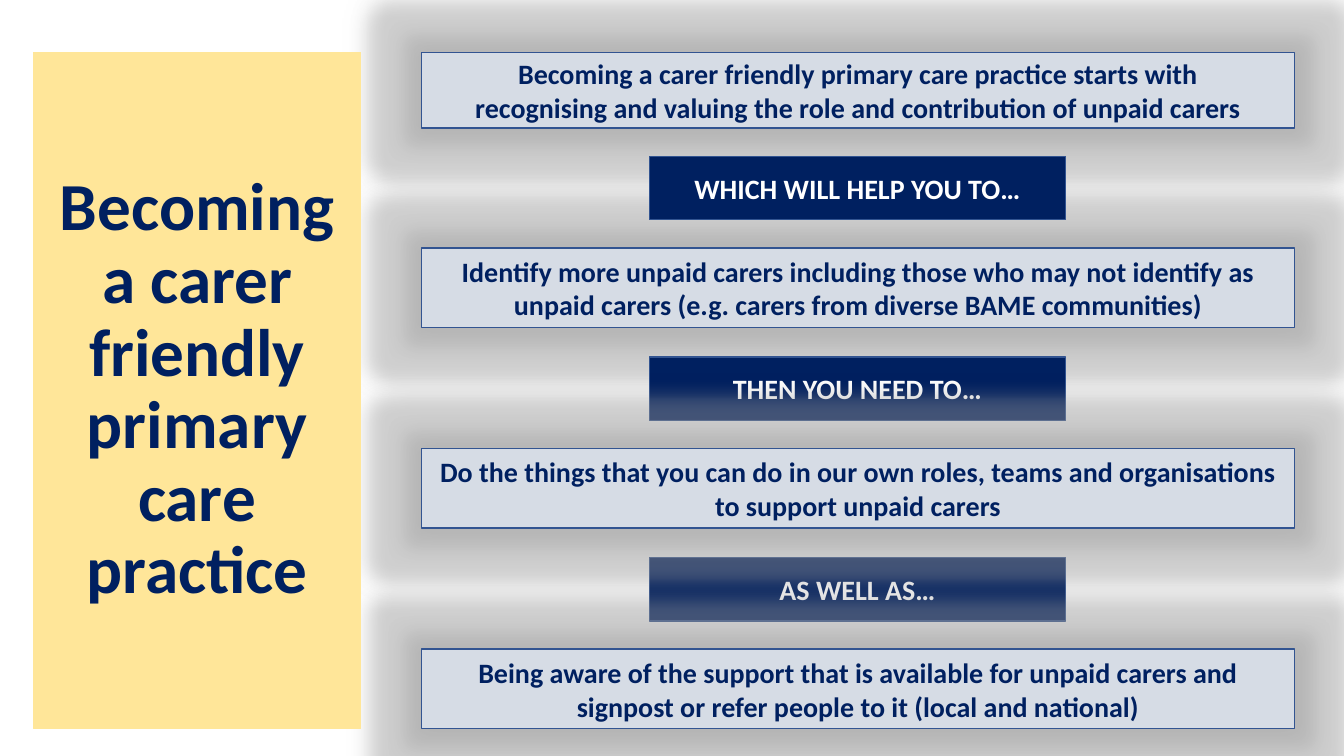
"""Build the slide on becoming a carer friendly primary care practice."""
from dataclasses import dataclass

from lxml import etree
from pptx import Presentation
from pptx.dml.color import RGBColor
from pptx.enum.shapes import MSO_SHAPE
from pptx.enum.text import MSO_ANCHOR, PP_ALIGN
from pptx.oxml.ns import qn
from pptx.util import Inches, Pt

RECTANGLE = MSO_SHAPE.RECTANGLE
MIDDLE = MSO_ANCHOR.MIDDLE
CENTER = PP_ALIGN.CENTER

FONT = "Calibri"
NAVY, WHITE, BORDER = "002060", "FFFFFF", "325491"
PALE_BLUE, YELLOW = "D6DCE5", "FFE699"
GLOW_GREY, SHADOW_BLACK = "A5A5A5", "000000"


@dataclass(frozen=True)
class Style:
    left: float
    width: float
    fill: str
    line: str
    line_width: float
    font_color: str
    size: int
    glowing: bool = False


@dataclass(frozen=True)
class Panel:
    style: Style
    top: float
    height: float
    lines: tuple[str, ...]


STATEMENT = Style(4.18, 8.66, PALE_BLUE, BORDER, 1, NAVY, 20, glowing=True)
PROMPT = Style(6.44, 4.13, NAVY, BORDER, 1, WHITE, 20)
TITLE = Style(0.33, 3.25, YELLOW, YELLOW, 0.75, NAVY, 48)

STEP = 1.99
STATEMENT_TOP, PROMPT_TOP = 2.46, 1.55


def statement(row: int, text: str) -> Panel:
    """Return a full-height statement, with row 0 as the second on the page."""
    return Panel(STATEMENT, STATEMENT_TOP + row * STEP, 0.79, (text,))


def prompt(row: int, text: str) -> Panel:
    """Return the linking prompt above the statement of the same row."""
    return Panel(PROMPT, PROMPT_TOP + row * STEP, 0.63, (text,))


PANELS = (
    Panel(STATEMENT, 0.52, 0.75, (
        "Becoming a carer friendly primary care practice starts with",
        "recognising and valuing the role and contribution of unpaid carers",
    )),
    statement(0, "Identify more unpaid carers including those who may not identify as "
                 "unpaid carers (e.g. carers from diverse BAME communities)"),
    prompt(2, "AS WELL AS…"),
    prompt(1, "THEN YOU NEED TO…"),
    statement(2, "Being aware of the support that is available for unpaid carers and "
                 "signpost or refer people to it (local and national)"),
    statement(1, "Do the things that you can do in our own roles, teams and "
                 "organisations to support unpaid carers"),
    prompt(0, "WHICH WILL HELP YOU TO…"),
    Panel(TITLE, 0.52, 6.71, ("Becoming a carer friendly primary care practice",)),
)


def color(value: str) -> RGBColor:
    """Turn a hex string into a colour."""
    return RGBColor.from_string(value)


def add_effect(effects, tag: str, value: str, alpha: int, **attributes: str) -> None:
    """Add one translucent effect, with alpha in percent."""
    effect = etree.SubElement(effects, qn(tag), attributes)
    shade = etree.SubElement(effect, qn("a:srgbClr"), val=value)
    etree.SubElement(shade, qn("a:alpha"), val=str(alpha * 1000))


def add_glow(box) -> None:
    """Surround a box with a grey glow and a soft shadow."""
    effects = box._element.spPr.find(qn("a:effectLst"))
    add_effect(effects, "a:glow", GLOW_GREY, 40, rad=str(Inches(0.35)))
    add_effect(effects, "a:outerShdw", SHADOW_BLACK, 20, blurRad=str(Inches(0.2)),
               dist="0", algn="ctr", rotWithShape="0")


def add_panel(page, panel: Panel) -> None:
    """Draw one rectangle with its centred bold text."""
    style = panel.style
    box = page.shapes.add_shape(RECTANGLE, Inches(style.left), Inches(panel.top),
                                Inches(style.width), Inches(panel.height))
    box.fill.solid()
    box.fill.fore_color.rgb = color(style.fill)
    box.line.color.rgb = color(style.line)
    box.line.width = Pt(style.line_width)
    box.shadow.inherit = False
    if style.glowing:
        add_glow(box)

    frame = box.text_frame
    frame.word_wrap = True
    frame.vertical_anchor = MIDDLE
    for index, line in enumerate(panel.lines):
        para = frame.add_paragraph() if index else frame.paragraphs[0]
        para.alignment = CENTER
        if style is TITLE:
            para.line_spacing = 0.9
            para.space_before = para.space_after = Pt(6)
        span = para.add_run()
        span.text = line
        span.font.name = FONT
        span.font.size = Pt(style.size)
        span.font.bold = True
        span.font.color.rgb = color(style.font_color)


def main() -> None:
    """Create the deck and save it."""
    deck = Presentation()
    deck.slide_width, deck.slide_height = Inches(13.33), Inches(7.5)
    page = deck.slides.add_slide(deck.slide_layouts[6])
    for panel in PANELS:
        add_panel(page, panel)
    deck.save("out.pptx")


if __name__ == "__main__":
    main()
